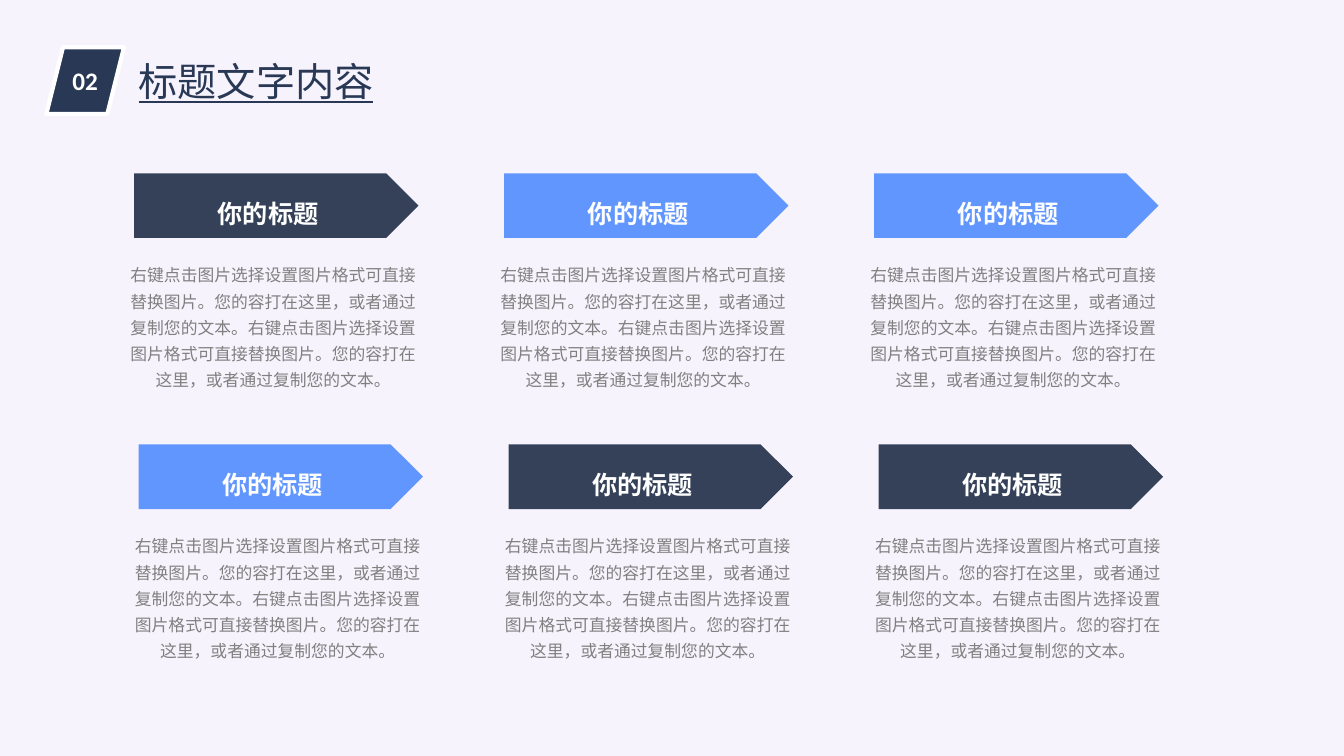
from lxml.etree import SubElement
from pptx import Presentation
from pptx.dml.color import RGBColor
from pptx.enum.shapes import MSO_SHAPE
from pptx.enum.text import MSO_ANCHOR, MSO_AUTO_SIZE, PP_ALIGN
from pptx.oxml.ns import qn
from pptx.util import Inches, Pt

CJK = "Noto Sans CJK SC"
NAVY, SLATE, BLUE, WHITE, GRAY = "283855", "344159", "6196FF", "FFFFFF", "808080"
HEADING = "你的标题"
BODY = "右键点击图片选择设置图片格式可直接替换图片。您的容打在这里，或者通过复制您的文本。" * 2


def paint(fill, color):
    fill.solid()
    fill.fore_color.rgb = RGBColor.from_string(color)


def write(shape, text, size, color, font=CJK, bold=False, underline=False, spacing=1.0):
    frame = shape.text_frame
    frame.word_wrap = True
    paragraph = frame.paragraphs[0]
    paragraph.text = text
    paragraph.alignment = PP_ALIGN.CENTER
    paragraph.line_spacing = spacing
    paragraph.font.name = font
    paragraph.font.size = Pt(size)
    paragraph.font.bold = bold
    paragraph.font.underline = underline
    paint(paragraph.font.fill, color)
    defaults = paragraph._p.find(".//" + qn("a:defRPr"))
    SubElement(defaults, qn("a:ea")).set("typeface", font)
    return frame


prs = Presentation()
prs.slide_width, prs.slide_height = Inches(13.33), Inches(7.5)
slide = prs.slides.add_slide(prs.slide_layouts[6])
paint(slide.background.fill, "F7F3FD")

number = slide.shapes.add_shape(
    MSO_SHAPE.PARALLELOGRAM, Inches(0.46), Inches(0.47), Inches(0.77), Inches(0.66))
number.shadow.inherit = False
paint(number.fill, NAVY)
paint(number.line.fill, WHITE)
number.line.width = Pt(3)
write(number, "02", 18, WHITE, "Calibri", bold=True).vertical_anchor = MSO_ANCHOR.MIDDLE

title = slide.shapes.add_textbox(Inches(1.23), Inches(0.52), Inches(2.62), Inches(0.57))
write(title, "标题文字内容", 28, NAVY, underline=True).auto_size = MSO_AUTO_SIZE.SHAPE_TO_FIT_TEXT

rows = [(1.33, 1.72, [SLATE, BLUE, BLUE]), (1.375, 4.41, [BLUE, SLATE, SLATE])]
for row_left, top, colors in rows:
    for column, color in enumerate(colors):
        left = row_left + column * 3.67
        card = slide.shapes.add_group_shape().shapes

        banner = card.add_shape(
            MSO_SHAPE.PENTAGON, Inches(left), Inches(top), Inches(2.82), Inches(0.64))
        banner.shadow.inherit = False
        paint(banner.fill, color)
        banner.line.fill.background()
        heading = write(banner, HEADING, 18, WHITE, bold=True, spacing=1.5)
        heading.vertical_anchor = MSO_ANCHOR.MIDDLE

        description = card.add_textbox(
            Inches(left - 0.04), Inches(top + 0.85), Inches(2.84), Inches(1.57))
        body = write(description, BODY, 12, GRAY, spacing=1.3)
        body.margin_left = body.margin_right = body.margin_top = body.margin_bottom = 0
        body.auto_size = MSO_AUTO_SIZE.SHAPE_TO_FIT_TEXT

prs.save("out.pptx")
